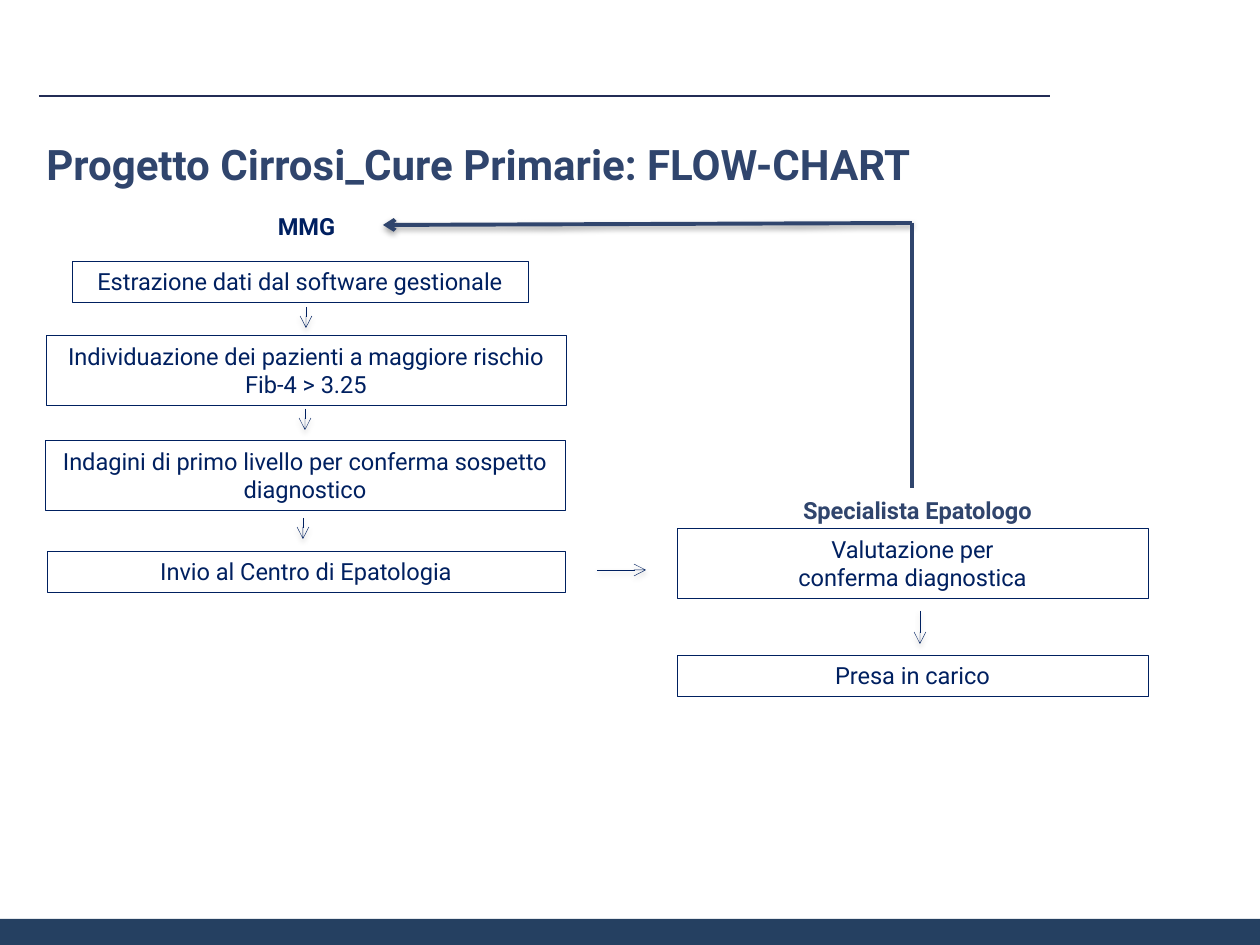
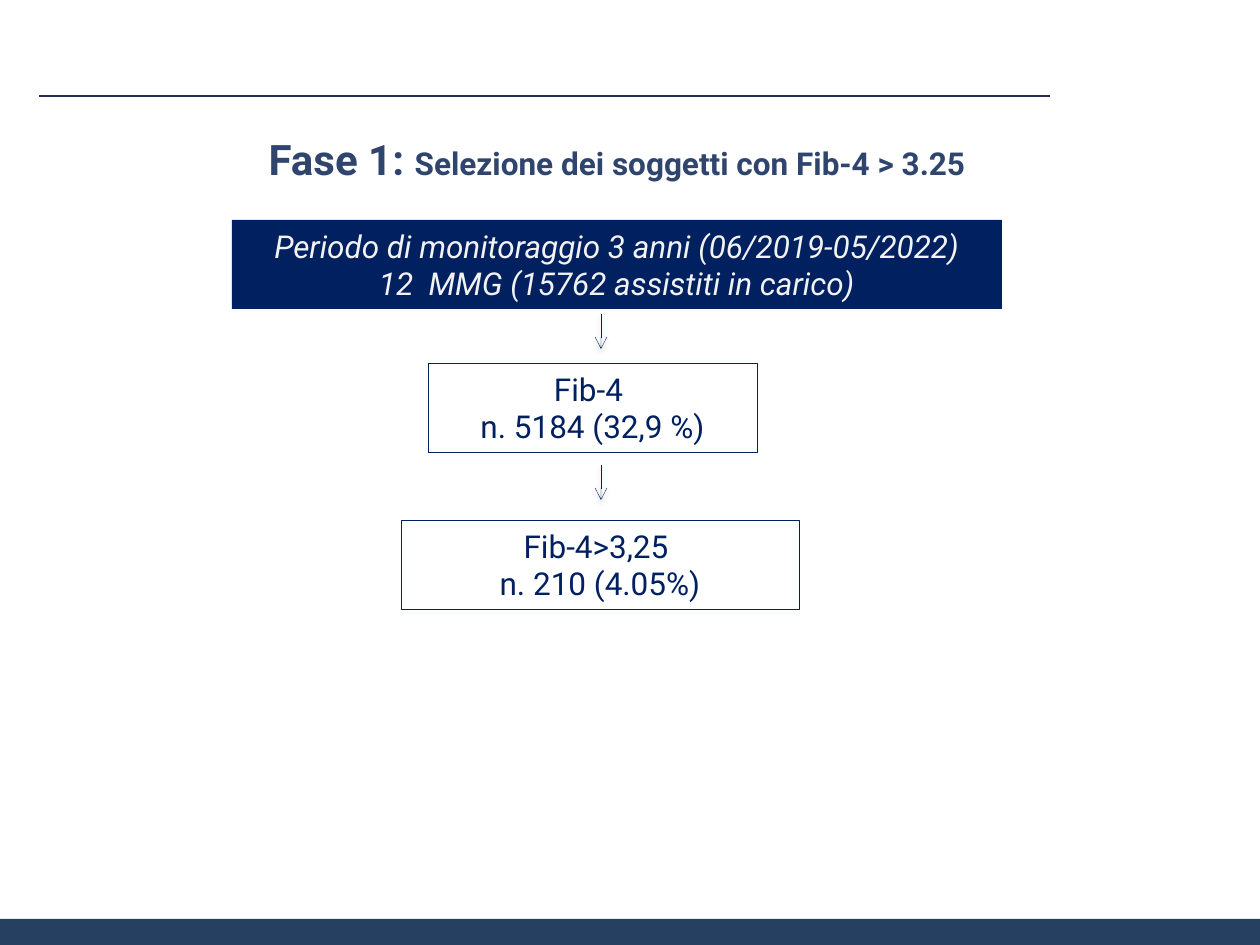
import pptx
import pptx.util
import pptx.dml.color
import pptx.enum.shapes
import pptx.enum.text
import pptx.oxml
import pptx.oxml.ns

PX = 914400 // 126
FONT = "Roboto"
COLORS = {
    "navy": "002060",
    "slate": "30456D",
    "rule": "232C55",
    "band": "254061",
    "pale": "F2F2F2",
}
ALIGN = pptx.enum.text.PP_ALIGN
SHADOW = (
    '<a:effectLst %s><a:outerShdw blurRad="40000" dist="20000" dir="5400000" rotWithShape="0">'
    '<a:srgbClr val="000000"><a:alpha val="38000"/></a:srgbClr></a:outerShdw></a:effectLst>'
)
HEAD = '<a:tailEnd %s type="arrow"/>'


def px(*vals):
    return [pptx.util.Emu(val * PX) for val in vals]


def color(name):
    return pptx.dml.color.RGBColor.from_string(COLORS[name])


def xml(text):
    return pptx.oxml.parse_xml(text % pptx.oxml.ns.nsdecls("a"))


# Text: each line is a string, or a list of (string, size) runs
def write(shape, lines, size, ink, bold=False, italic=False, align=ALIGN.CENTER):
    frame = shape.text_frame
    frame.word_wrap = True
    frame.auto_size = pptx.enum.text.MSO_AUTO_SIZE.SHAPE_TO_FIT_TEXT
    for num, line in enumerate(lines):
        para = frame.paragraphs[0] if num == 0 else frame.add_paragraph()
        para.alignment = align
        font = para.font
        font.name, font.size = FONT, pptx.util.Pt(size)
        font.bold, font.italic = bold, italic
        font.color.rgb = color(ink)
        if isinstance(line, str):
            para.add_run().text = line
            continue
        for words, points in line:
            run = para.add_run()
            run.text = words
            run.font.size = pptx.util.Pt(points)


def label(slide, area, lines, size, ink, align=ALIGN.CENTER):
    write(slide.shapes.add_textbox(*px(*area)), lines, size, ink, bold=True, align=align)


# Rectangles: filled, or outlined when no fill is given
def rect(slide, area, fill=None):
    kind = pptx.enum.shapes.MSO_SHAPE.RECTANGLE
    shape = slide.shapes.add_shape(kind, *px(*area))
    shape.shadow.inherit = False
    if fill:
        shape.fill.solid()
        shape.fill.fore_color.rgb = color(fill)
        shape.line.fill.background()
    else:
        shape.fill.background()
        shape.line.color.rgb = color("navy")
        shape.line.width = pptx.util.Pt(0.25)
    return shape


def step(slide, area, lines, size):
    write(rect(slide, area), lines, size, "navy")


# Lines and arrows
def line(slide, ends, ink="navy", width=0.25, arrow=False):
    kind = pptx.enum.shapes.MSO_CONNECTOR.STRAIGHT
    wire = slide.shapes.add_connector(kind, *px(*ends))
    wire.line.color.rgb = color(ink)
    wire.line.width = pptx.util.Pt(width)
    if arrow:
        wire.line._get_or_add_ln().append(xml(HEAD))
    wire._element.spPr.append(xml(SHADOW if arrow else "<a:effectLst %s/>"))


def down(slide, x, top, size):
    line(slide, (x, top, x, top + size), arrow=True)


# Shared frame: footer band and top rule
def page(deck):
    slide = deck.slides.add_slide(deck.slide_layouts[6])
    rect(slide, (0, 919, 1260, 26), "band")
    line(slide, (39, 96, 1050, 96), "rule", 1.5)
    return slide


def flow(deck):
    slide = page(deck)
    label(slide, (34, 132, 1017, 63), ["Progetto Cirrosi_Cure Primarie: FLOW-CHART"],
          24, "slate", ALIGN.LEFT)

    # Role headings
    label(slide, (265, 206, 83, 41), ["MMG"], 13.5, "navy")
    label(slide, (784, 490, 267, 41), ["Specialista Epatologo"], 13.5, "slate")

    # Steps of both roles
    for area, lines in (
        ((72, 261, 456, 41), ["Estrazione dati dal software gestionale"]),
        ((46, 335, 520, 70), ["Individuazione dei pazienti a maggiore rischio Fib-4 > 3.25"]),
        ((45, 440, 520, 70), ["Indagini di primo livello per conferma sospetto diagnostico"]),
        ((47, 551, 518, 41), ["Invio al Centro di Epatologia"]),
        ((677, 528, 471, 70), ["Valutazione per", "conferma diagnostica"]),
        ((677, 655, 471, 41), ["Presa in carico"]),
    ):
        step(slide, area, lines, 13.5)

    # Links between steps
    for x, top, size in ((306, 307, 21), (305, 409, 21), (303, 518, 21), (920, 611, 33)):
        down(slide, x, top, size)
    line(slide, (597, 570, 646, 570), arrow=True)

    # Way back to the first role
    line(slide, (912, 223, 383, 225), "slate", 2.25, arrow=True)
    line(slide, (912, 223, 912, 488), "slate", 2.25)


def phase(deck):
    slide = page(deck)
    label(slide, (0, 127, 1234, 63),
          [[("Fase 1: ", 24), ("Selezione dei soggetti con Fib-4 > 3.25", 18)]], 24, "slate")

    # Period covered
    period = rect(slide, (232, 220, 770, 89), "navy")
    write(period, ["Periodo di monitoraggio 3 anni (06/2019-05/2022)",
                   "12  MMG (15762 assistiti in carico)"], 18, "pale", italic=True)

    # Selected groups
    step(slide, (428, 363, 329, 89), ["Fib-4 ", "n. 5184 (32,9 %)"], 18)
    step(slide, (401, 520, 398, 89), ["Fib-4>3,25 ", "n. 210 (4.05%)"], 18)
    for top in (314, 465):
        down(slide, 601, top, 35)


def main():
    deck = pptx.Presentation()
    deck.slide_width, deck.slide_height = px(1260, 945)
    flow(deck)
    phase(deck)
    deck.save("out.pptx")


if __name__ == "__main__":
    main()
